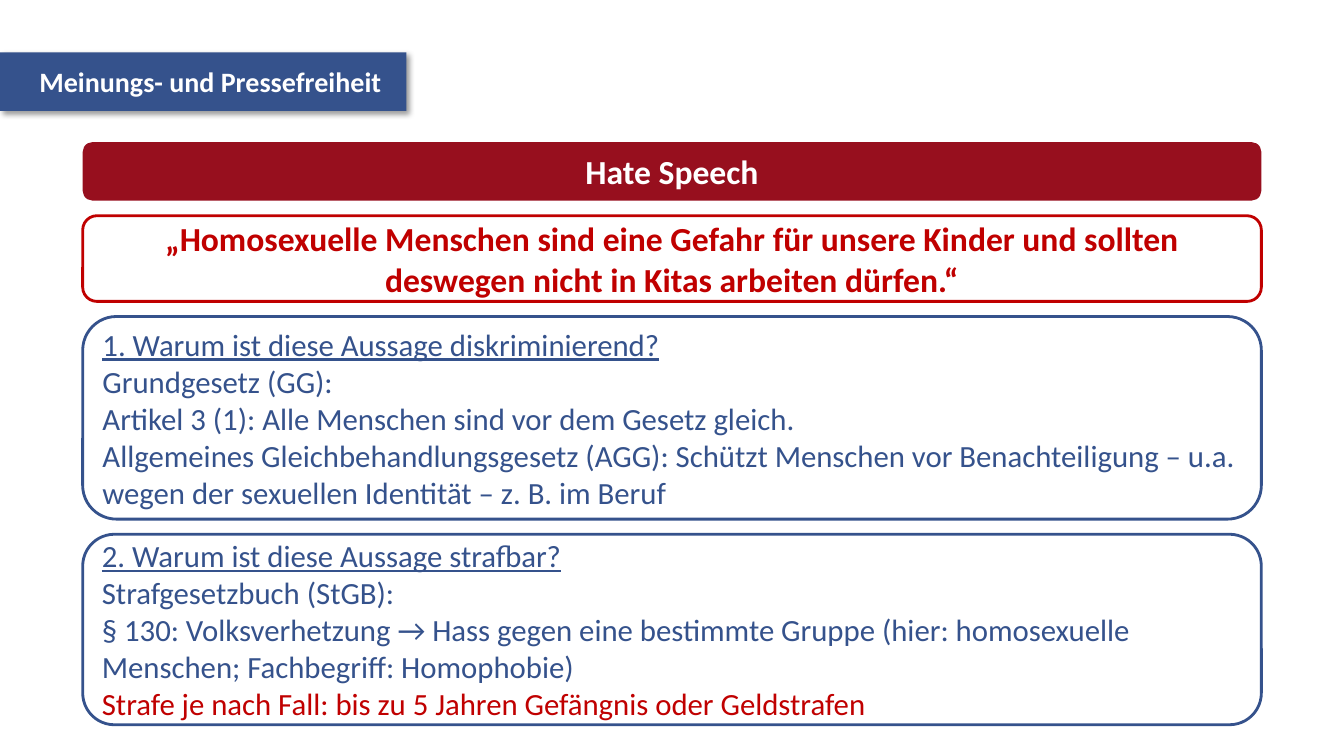
from pptx import Presentation
from pptx.dml.color import RGBColor
from pptx.enum.shapes import MSO_SHAPE as SHAPE
from pptx.enum.text import MSO_ANCHOR as ANCHOR, MSO_AUTO_SIZE as AUTO, PP_ALIGN as ALIGN
from pptx.oxml import parse_xml
from pptx.oxml.ns import nsdecls
from pptx.util import Inches, Pt

BLUE, DARK_RED, RED, WHITE = "35528C", "970F1E", "C00000", "FFFFFF"


def rgb(color):
    return RGBColor.from_string(color)


def add_run(p, text, size, color, bold=False, underline=False):
    r = p.add_run()
    r.text = text
    r.font.name = "Calibri"
    r.font.size = Pt(size)
    r.font.color.rgb = rgb(color)
    r.font.bold = bold
    r.font.underline = underline


prs = Presentation()
prs.slide_width, prs.slide_height = Inches(13.33), Inches(7.5)
s = prs.slides.add_slide(prs.slide_layouts[5])

title = s.shapes.title
title.left, title.top = Inches(0), Inches(0.52)
title.width, title.height = Inches(4.03), Inches(0.58)
title.fill.solid()
title.fill.fore_color.rgb = rgb(BLUE)
title._element.spPr.append(parse_xml(
    f'<a:effectLst {nsdecls("a")}><a:outerShdw blurRad="50800" dist="38100" '
    'dir="2700000" algn="tl" rotWithShape="0"><a:srgbClr val="000000">'
    '<a:alpha val="40000"/></a:srgbClr></a:outerShdw></a:effectLst>'))
tf = title.text_frame
tf.auto_size = AUTO.NONE
tf.word_wrap = False
tf.vertical_anchor = ANCHOR.MIDDLE
tf.margin_left, tf.margin_right = Inches(0.39), Inches(0.2)
tf.margin_top = tf.margin_bottom = Inches(0.12)
p = tf.paragraphs[0]
p.alignment = ALIGN.LEFT
add_run(p, "Meinungs- und Pressefreiheit", 20, WHITE, bold=True)

headline = [("Hate Speech", WHITE)]
quote = [("„Homosexuelle Menschen sind eine Gefahr für unsere Kinder und sollten "
          "deswegen nicht in Kitas arbeiten dürfen.“", RED)]
discrimination = [
    ("1. Warum ist diese Aussage diskriminierend?", BLUE),
    ("Grundgesetz (GG):", BLUE),
    ("Artikel 3 (1): Alle Menschen sind vor dem Gesetz gleich.", BLUE),
    ("Allgemeines Gleichbehandlungsgesetz (AGG): Schützt Menschen vor Benachteiligung "
     "– u.a. wegen der sexuellen Identität – z. B. im Beruf", BLUE),
]
punishment = [
    ("2. Warum ist diese Aussage strafbar?", BLUE),
    ("Strafgesetzbuch (StGB):", BLUE),
    ("§ 130: Volksverhetzung → Hass gegen eine bestimmte Gruppe (hier: homosexuelle "
     "Menschen; Fachbegriff: Homophobie)", BLUE),
    ("Strafe je nach Fall: bis zu 5 Jahren Gefängnis oder Geldstrafen", RED),
]

boxes = [
    (0.58, DARK_RED, None, headline),
    (0.85, None, RED, quote),
    (2.01, None, BLUE, discrimination),
    (1.89, None, BLUE, punishment),
]
top, gap = 1.41, 0.15
for height, fill, line, lines in boxes:
    sp = s.shapes.add_shape(SHAPE.ROUNDED_RECTANGLE, Inches(0.82), Inches(top),
                            Inches(11.69), Inches(height))
    top += height + gap
    sp.shadow.inherit = False
    if fill:
        sp.fill.solid()
        sp.fill.fore_color.rgb = rgb(fill)
    else:
        sp.fill.background()
    if line:
        sp.line.color.rgb = rgb(line)
        sp.line.width = Pt(2)
    else:
        sp.line.fill.background()
    tf = sp.text_frame
    tf.word_wrap = True
    tf.vertical_anchor = ANCHOR.MIDDLE
    is_list = len(lines) > 1
    for i, (text, color) in enumerate(lines):
        p = tf.add_paragraph() if i else tf.paragraphs[0]
        p.alignment = ALIGN.LEFT if is_list else ALIGN.CENTER
        add_run(p, text, 22 if is_list else 24, color,
                bold=not is_list, underline=is_list and i == 0)

prs.save("out.pptx")
